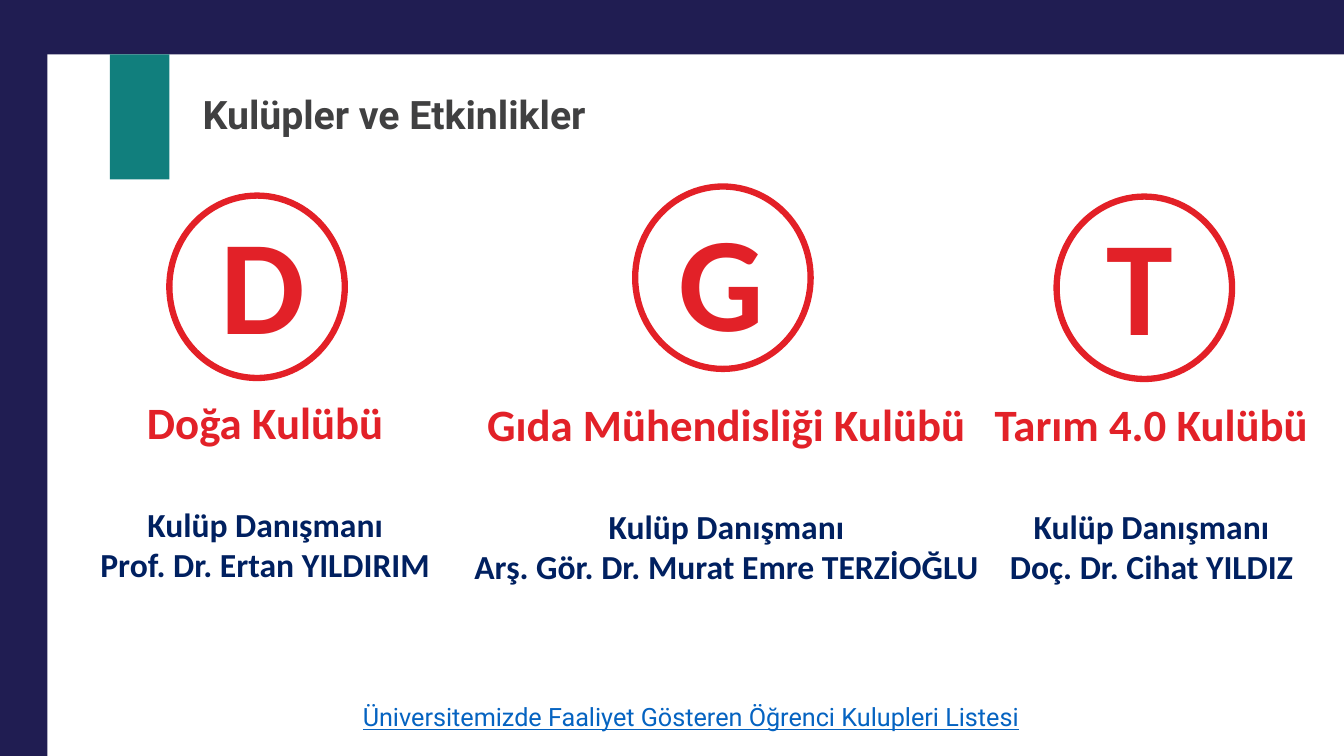
from dataclasses import dataclass

from pptx import Presentation
from pptx.dml.color import RGBColor
from pptx.enum.shapes import MSO_SHAPE
from pptx.enum.text import MSO_ANCHOR, PP_ALIGN
from pptx.slide import Slide
from pptx.text.text import _Paragraph
from pptx.util import Pt

PX = 9144  # EMU per px, 100 px to the inch


@dataclass(frozen=True)
class Theme:
    navy: str = "201D52"
    teal: str = "117F7D"
    ring: str = "E32027"
    red: str = "E22128"
    blue: str = "002060"
    link: str = "0563C1"
    title: str = "404041"
    heading_font: str = "Roboto"
    club_font: str = "Calibri"
    letter_size: int = 96
    club_size: int = 32
    title_size: int = 28
    advisor_size: int = 24
    link_size: int = 18
    ring_width: float = 4.5


@dataclass(frozen=True)
class Box:
    x: int
    y: int
    w: int
    h: int

    def emu(self) -> tuple[int, ...]:
        return tuple(v * PX for v in (self.x, self.y, self.w, self.h))


@dataclass(frozen=True)
class Bar:
    box: Box
    color: str


@dataclass(frozen=True)
class Club:
    letter: str
    name: str
    advisor: str
    letter_at: tuple[int, int]
    ring_at: tuple[int, int]
    caption: Box


T = Theme()
BARS = [
    Bar(Box(0, 0, 47, 750), T.navy),
    Bar(Box(0, 0, 1333, 54), T.navy),
    Bar(Box(109, 54, 59, 124), T.teal),
]
CLUBS = [
    Club("D", "Doğa Kulübü", "Prof. Dr. Ertan YILDIRIM",
         (209, 194), (168, 194), Box(89, 387, 348, 199)),
    Club("G", "Gıda Mühendisliği Kulübü", "Arş. Gör. Dr. Murat Emre TERZİOĞLU",
         (663, 191), (630, 185), Box(446, 389, 549, 199)),
    Club("T", "Tarım 4.0 Kulübü", "Doç. Dr. Cihat YILDIZ",
         (1088, 195), (1048, 195), Box(968, 389, 348, 199)),
]
LETTER_STYLE = dict(name=T.club_font, size=Pt(T.letter_size), bold=True, color=T.red)
CLUB_STYLE = LETTER_STYLE | dict(size=Pt(T.club_size))
ADVISOR_STYLE = LETTER_STYLE | dict(size=Pt(T.advisor_size), color=T.blue)
TITLE_STYLE = dict(name=T.heading_font, size=Pt(T.title_size), bold=True, color=T.title)
LINK_STYLE = dict(name=T.heading_font, size=Pt(T.link_size), underline=True, color=T.link)


def write(p: _Paragraph, text: str, style: dict) -> None:
    r = p.add_run()
    r.text = text
    for key, value in style.items():
        if key == "color":
            r.font.color.rgb = RGBColor.from_string(value)
        else:
            setattr(r.font, key, value)


def add_bar(s: Slide, bar: Bar) -> None:
    sp = s.shapes.add_shape(MSO_SHAPE.RECTANGLE, *bar.box.emu())
    sp.shadow.inherit = False
    sp.fill.solid()
    sp.fill.fore_color.rgb = RGBColor.from_string(bar.color)
    sp.line.fill.background()


def add_ring(s: Slide, box: Box) -> None:
    sp = s.shapes.add_shape(MSO_SHAPE.OVAL, *box.emu())
    sp.shadow.inherit = False
    sp.fill.background()
    sp.line.color.rgb = RGBColor.from_string(T.ring)
    sp.line.width = Pt(T.ring_width)


def add_text(s: Slide, box: Box, lines: list[tuple[str, dict]],
             align: PP_ALIGN = PP_ALIGN.LEFT) -> list[_Paragraph]:
    tf = s.shapes.add_textbox(*box.emu()).text_frame
    tf.word_wrap = True
    for i, (text, style) in enumerate(lines):
        p = tf.add_paragraph() if i else tf.paragraphs[0]
        p.alignment = align
        write(p, text, style)
    return list(tf.paragraphs)


def add_title(s: Slide, text: str) -> None:
    sp = s.shapes.title
    sp.left, sp.top, sp.width, sp.height = Box(113, 54, 1092, 124).emu()
    tf = sp.text_frame
    tf.vertical_anchor = MSO_ANCHOR.MIDDLE
    p = tf.paragraphs[0]
    p.alignment = PP_ALIGN.LEFT
    p.line_spacing = 0.9
    p._p.get_or_add_pPr().set("marL", str(78 * PX))
    write(p, text, TITLE_STYLE)


def add_club(s: Slide, club: Club) -> None:
    add_text(s, Box(*club.letter_at, 108, 172), [(club.letter, LETTER_STYLE)])
    add_ring(s, Box(*club.ring_at, 174, 181))
    caption = add_text(s, club.caption, [
        (club.name, CLUB_STYLE),
        ("Kulüp Danışmanı", ADVISOR_STYLE),
        (club.advisor, ADVISOR_STYLE),
    ], PP_ALIGN.CENTER)
    caption[1].space_before = Pt(39)


def main() -> None:
    prs = Presentation()
    prs.slide_width, prs.slide_height = 1333 * PX, 750 * PX
    s = prs.slides.add_slide(prs.slide_layouts[5])

    # Frame and heading
    add_title(s, "Kulüpler ve Etkinlikler")
    for bar in BARS:
        add_bar(s, bar)

    # Clubs with their advisors
    for club in CLUBS:
        add_club(s, club)

    # Closing line
    add_text(s, Box(350, 691, 710, 40),
             [("Üniversitemizde Faaliyet Gösteren Öğrenci Kulupleri Listesi", LINK_STYLE)])
    prs.save("out.pptx")


if __name__ == "__main__":
    main()
